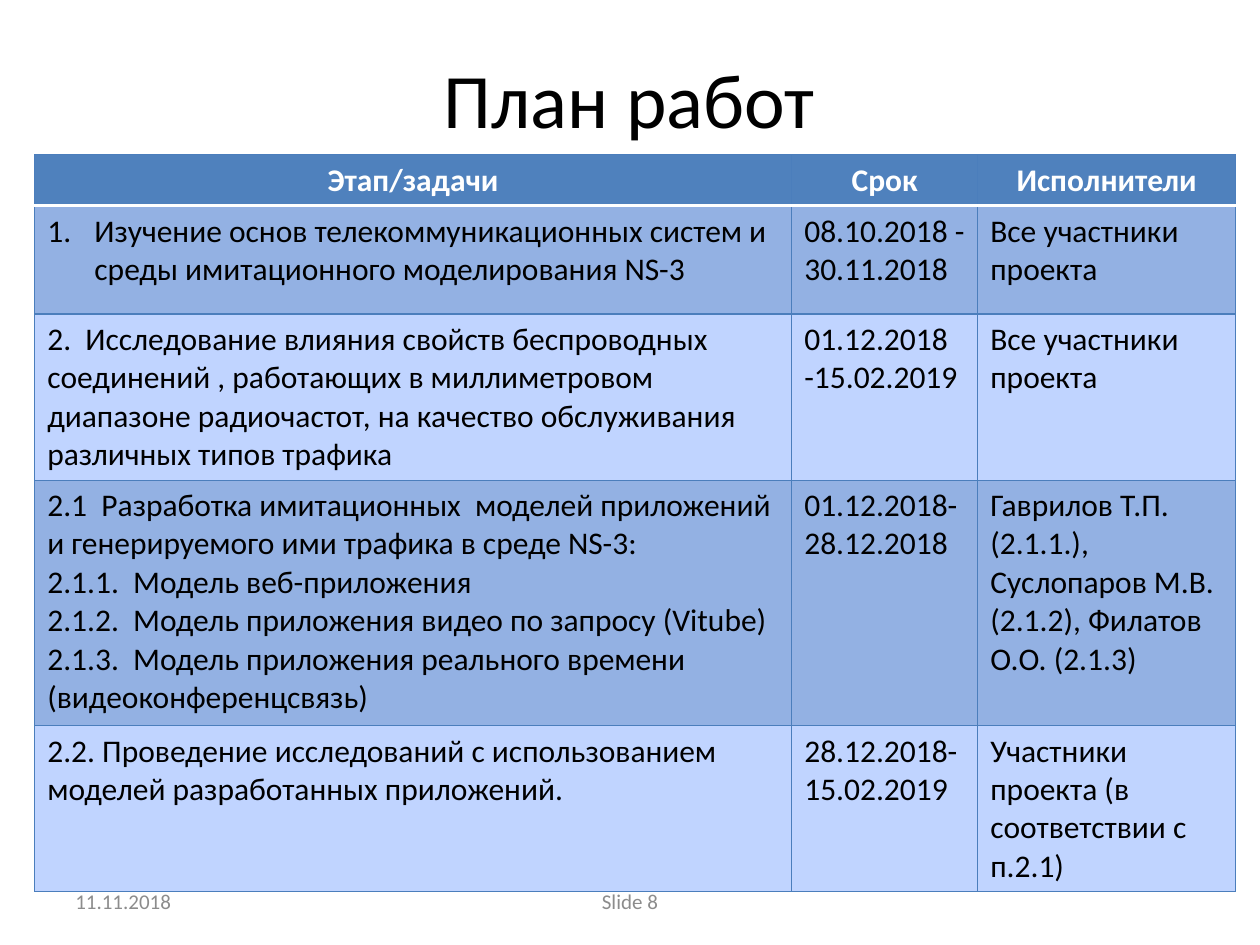
from lxml.etree import SubElement
from pptx import Presentation
from pptx.dml.color import RGBColor
from pptx.enum.text import MSO_ANCHOR, PP_ALIGN
from pptx.oxml import parse_xml
from pptx.oxml.ns import nsdecls, qn
from pptx.util import Cm, Pt

BLUE, LINE, WHITE, GRAY = "4F81BD", "4B7EBC", "FFFFFF", "8C8C8C"
BANDS = ["93B1E3", "C0D4FF"]
COLS = [15.26, 3.75, 5.2]
ROWS = [1.03, 2.18, 3.35, 4.95, 3.35]
HEAD = ["Этап/задачи", "Срок", "Исполнители"]
TASKS = [
    ["Изучение основ телекоммуникационных систем и среды имитационного моделирования NS-3",
     "08.10.2018 -\n30.11.2018",
     "Все участники проекта"],
    ["2.  Исследование влияния свойств беспроводных соединений , работающих в "
     "миллиметровом диапазоне радиочастот, на качество обслуживания различных типов трафика",
     "01.12.2018 -15.02.2019",
     "Все участники проекта"],
    ["2.1  Разработка имитационных  моделей приложений и генерируемого ими трафика в среде NS-3:\n"
     "2.1.1.  Модель веб-приложения\n"
     "2.1.2.  Модель приложения видео по запросу (Vitube)\n"
     "2.1.3.  Модель приложения реального времени (видеоконференцсвязь)",
     "01.12.2018-28.12.2018",
     "Гаврилов Т.П.\n(2.1.1.), Суслопаров М.В. (2.1.2), Филатов О.О. (2.1.3)"],
    ["2.2. Проведение исследований с использованием моделей разработанных приложений.",
     "28.12.2018-15.02.2019",
     "Участники проекта (в соответствии с п.2.1)"],
]


def color(code):
    return RGBColor.from_string(code)


def write(frame, text, size=18, tint="000000", bold=False, align=PP_ALIGN.LEFT):
    frame.word_wrap = True
    for i, line in enumerate(text.split("\n")):
        para = frame.paragraphs[0] if i == 0 else frame.add_paragraph()
        para.alignment = align
        run = para.add_run()
        run.text = line
        font = run.font
        font.name, font.size, font.bold = "Calibri", Pt(size), bold
        font.color.rgb = color(tint)


def label(slide, text, box, **style):
    frame = slide.shapes.add_textbox(*map(Cm, box)).text_frame
    frame.vertical_anchor = MSO_ANCHOR.MIDDLE
    write(frame, text, **style)


def border(cell, sides):
    props = cell._tc.get_or_add_tcPr()
    for i, (side, (tint, width)) in enumerate(sides.items()):
        props.insert(i, parse_xml(
            f'<a:ln{side} {nsdecls("a")} w="{Pt(width)}"><a:solidFill>'
            f'<a:srgbClr val="{tint}"/></a:solidFill></a:ln{side}>'))


def number(para):
    props = para._p.get_or_add_pPr()
    props.set("marL", str(Cm(0.95)))
    props.set("indent", str(-Cm(0.95)))
    SubElement(props, qn("a:buFont"), typeface="+mj-lt")
    SubElement(props, qn("a:buAutoNum"), type="arabicPeriod")


def plan(slide):
    data = [HEAD] + TASKS
    grid = slide.shapes.add_table(
        len(ROWS), len(COLS), Cm(0.7), Cm(3.12), Cm(sum(COLS)), Cm(sum(ROWS))).table
    grid.horz_banding = False
    for col, width in zip(grid.columns, COLS):
        col.width = Cm(width)
    for r, (row, height) in enumerate(zip(grid.rows, ROWS)):
        row.height = Cm(height)
        sides = dict.fromkeys("LRTB", (LINE, 0.75))
        if r < 2:
            sides["T" if r else "B"] = (WHITE, 2)
        for cell, text in zip(row.cells, data[r]):
            cell.fill.solid()
            cell.fill.fore_color.rgb = color(BANDS[(r - 1) % 2] if r else BLUE)
            border(cell, sides)
            if r:
                write(cell.text_frame, text)
            else:
                write(cell.text_frame, text, tint=WHITE, bold=True, align=PP_ALIGN.CENTER)
    number(grid.cell(1, 0).text_frame.paragraphs[0])


def main():
    deck = Presentation()
    deck.slide_width, deck.slide_height = Cm(25.4), Cm(19.05)
    slide = deck.slides.add_slide(deck.slide_layouts[6])
    label(slide, "План работ", (0.2, 0.74, 24.97, 2.46), size=44, align=PP_ALIGN.CENTER)
    label(slide, "Slide 8", (8.68, 17.65, 8.04, 1.02), size=12, tint=GRAY, align=PP_ALIGN.CENTER)
    label(slide, "11.11.2018", (1.27, 17.65, 5.93, 1.02), size=12, tint=GRAY)
    plan(slide)
    deck.save("out.pptx")


if __name__ == "__main__":
    main()
